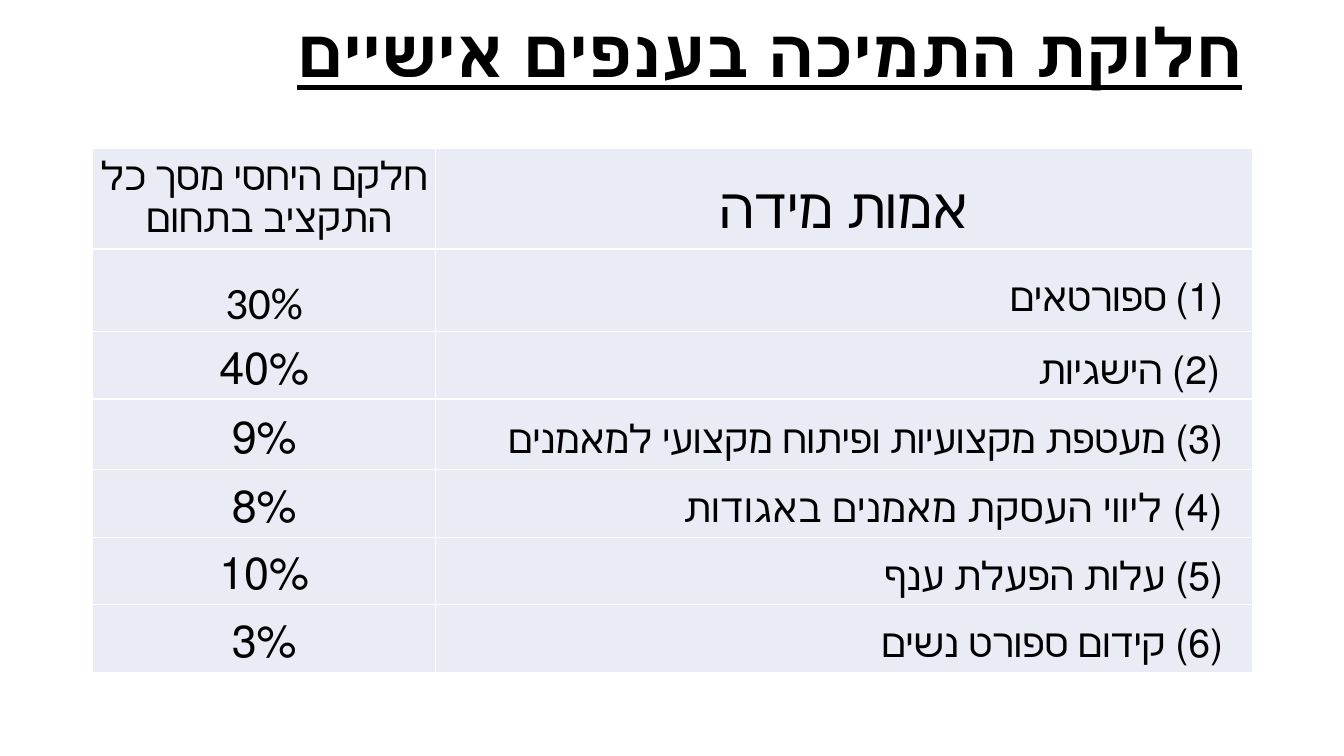
from pptx import Presentation
from pptx import util as u
from pptx.dml.color import RGBColor
from pptx.enum import text
from pptx.oxml import parse_xml
from pptx.oxml.ns import nsdecls

FONT = "Calibri"
INK = "000000"
CELL_FILL = "E9EBF5"
BORDER = "FFFFFF"
COLUMN_WIDTHS = [3.4, 8.1]
ROW_HEIGHTS = [0.98, 0.82, 0.67, 0.7, 0.67, 0.67, 0.67]
CRITERIA = [
    ("30%", "ספורטאים"),
    ("40%", "(2) הישגיות"),
    ("9%", "(3) מעטפת מקצועיות ופיתוח מקצועי למאמנים"),
    ("8%", "(4) ליווי העסקת מאמנים באגודות"),
    ("10%", "(5) עלות הפעלת ענף"),
    ("3%", "(6) קידום ספורט נשים"),
]
CENTER = text.PP_ALIGN.CENTER
RIGHT = text.PP_ALIGN.RIGHT


def color(value):
    """Turn a hex string into a colour."""
    return RGBColor.from_string(value)


def write(paragraph, words, size, align, spacing, after=0, rtl=True):
    """Format a paragraph and add one run of text to it."""
    paragraph.alignment = align
    paragraph.line_spacing = spacing
    paragraph.space_after = u.Pt(after)
    if rtl:
        paragraph._p.get_or_add_pPr().set("rtl", "1")
    run = paragraph.add_run()
    run.text = words
    run.font.size = u.Pt(size)
    run.font.name = FONT
    run.font.color.rgb = color(INK)
    return run


def indent(paragraph, margin, first_line=0):
    """Set the start margin and first-line indent in inches."""
    properties = paragraph._p.get_or_add_pPr()
    properties.set("marL", str(u.Inches(margin)))
    properties.set("indent", str(u.Inches(first_line)))
    return properties


def style_cell(cell):
    """Give a cell its margins, anchor, white borders and fill."""
    cell.margin_left = cell.margin_right = u.Inches(0.07)
    cell.margin_top = cell.margin_bottom = 0
    cell.vertical_anchor = text.MSO_ANCHOR.MIDDLE
    properties = cell._tc.get_or_add_tcPr()
    for side in ("lnL", "lnR", "lnT", "lnB"):
        properties.append(parse_xml(
            f'<a:{side} {nsdecls("a")} w="{u.Pt(1)}"><a:solidFill>'
            f'<a:srgbClr val="{BORDER}"/></a:solidFill></a:{side}>'))
    cell.fill.solid()
    cell.fill.fore_color.rgb = color(CELL_FILL)


def add_title(slide, left, top, width, height):
    """Place the underlined heading in its box."""
    shape = slide.shapes.add_textbox(*map(u.Inches, (left, top, width, height)))
    frame = shape.text_frame
    frame.word_wrap = True
    frame.vertical_anchor = text.MSO_ANCHOR.MIDDLE
    run = write(frame.paragraphs[0], "חלוקת התמיכה בענפים אישיים", 48, RIGHT, 0.9)
    run.font.bold = True
    run.font.underline = True


def add_criteria_table(slide, left, top):
    """Place the table of criteria and their budget shares."""
    box = (left, top, sum(COLUMN_WIDTHS), sum(ROW_HEIGHTS))
    table = slide.shapes.add_table(
        len(ROW_HEIGHTS), len(COLUMN_WIDTHS), *map(u.Inches, box)).table
    table.first_row = table.horz_banding = False
    for column, width in zip(table.columns, COLUMN_WIDTHS):
        column.width = u.Inches(width)
    for row, height in zip(table.rows, ROW_HEIGHTS):
        row.height = u.Inches(height)
    for cell in table.iter_cells():
        style_cell(cell)

    share_head, criterion_head = (
        cell.text_frame.paragraphs[0] for cell in table.rows[0].cells)
    write(share_head, "חלקם היחסי מסך כל התקציב בתחום ", 28, CENTER, 1.07, 8)
    write(criterion_head, "אמות מידה", 40, CENTER, 1.46, 8)

    for number, (share, criterion) in enumerate(CRITERIA, 1):
        first = number == 1
        share_text, criterion_text = (
            cell.text_frame.paragraphs[0] for cell in table.rows[number].cells)
        write(share_text, share, 32, CENTER, 1.5 if first else 1.24, 8, not first)
        run = write(criterion_text, criterion, 28, RIGHT, 1.5 if first else 1.4)
        if first:
            indent(criterion_text, 0.78, -0.56).append(parse_xml(
                f'<a:buAutoNum {nsdecls("a")} type="arabicParenBoth"/>'))
        else:
            indent(criterion_text, 0.25 if number == 2 else 0.22)
        if number == 4:
            run.font._element.set("spc", "50")


def main():
    """Build and save the slide."""
    presentation = Presentation()
    presentation.slide_width = u.Inches(13.33)
    presentation.slide_height = u.Inches(7.5)
    slide = presentation.slides.add_slide(presentation.slide_layouts[6])
    add_title(slide, 0.92, 0.12, 11.5, 0.86)
    add_criteria_table(slide, 0.92, 1.47)
    presentation.save("out.pptx")


if __name__ == "__main__":
    main()
